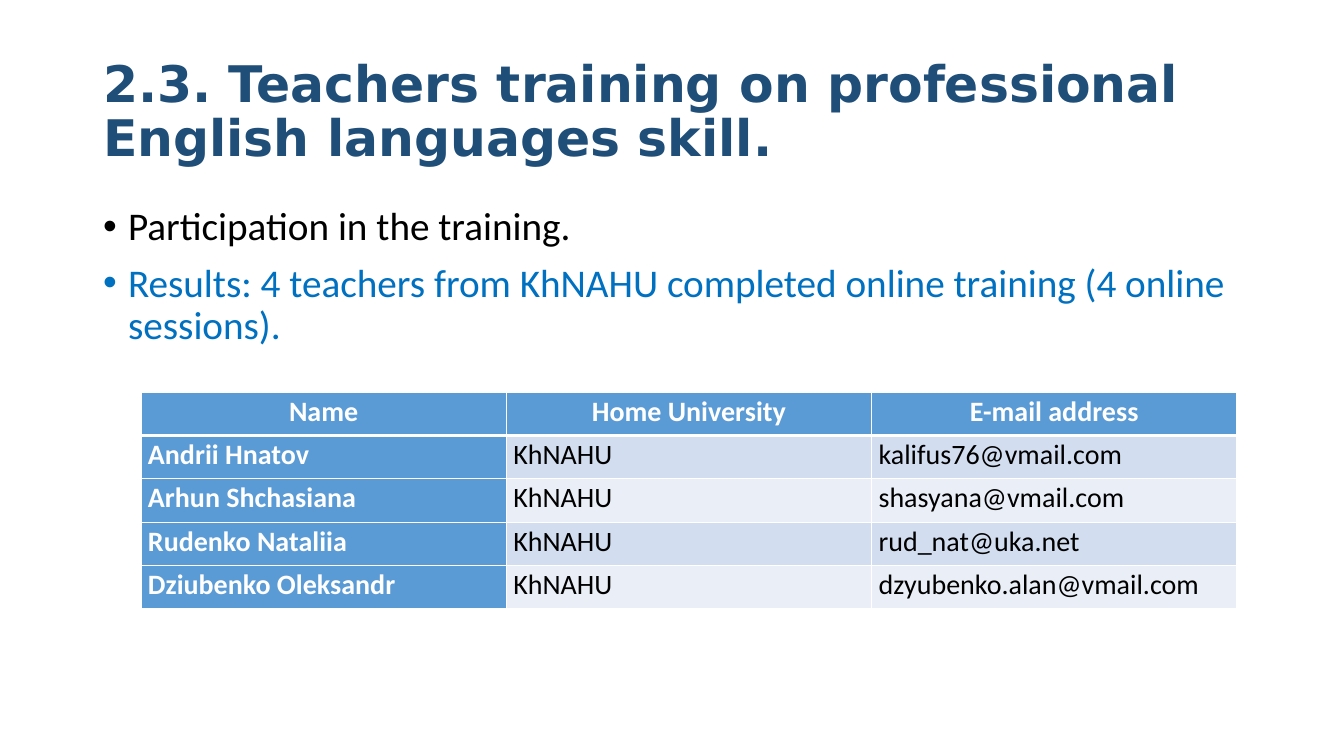
from lxml import etree
from pptx import Presentation
from pptx.dml.color import RGBColor
from pptx.enum.text import MSO_ANCHOR, MSO_AUTO_SIZE, PP_ALIGN
from pptx.oxml.ns import qn
from pptx.util import Pt

LEFT, CENTER = PP_ALIGN.LEFT, PP_ALIGN.CENTER
TOP, MIDDLE = MSO_ANCHOR.TOP, MSO_ANCHOR.MIDDLE
NO_AUTO_SIZE = MSO_AUTO_SIZE.NONE

WHITE, BLACK = "FFFFFF", "000000"
NAVY, BLUE, HEADER_BLUE = "1F4E79", "0070C0", "5B9BD5"
BANDS = ("D2DEEF", "EAEFF7")

TITLE = "2.3. Teachers training on professional English languages skill."
BULLETS = [
    ("Participation in the training.", BLACK),
    ("Results: 4 teachers from KhNAHU completed online training (4 online sessions).", BLUE),
]
TEACHERS = [
    ("Name", "Home University", "E-mail address"),
    ("Andrii Hnatov", "KhNAHU", "kalifus76@vmail.com"),
    ("Arhun Shchasiana", "KhNAHU", "shasyana@vmail.com"),
    ("Rudenko Nataliia", "KhNAHU", "rud_nat@uka.net"),
    ("Dziubenko Oleksandr", "KhNAHU", "dzyubenko.alan@vmail.com"),
]


def px(length):
    return round(length * 914400 / 100.8)


def color(value):
    return RGBColor.from_string(value)


class SlideBuilder:
    title_font = "DejaVu Sans"
    body_font = "Calibri"

    def __init__(self, presentation):
        self.slide = presentation.slides.add_slide(presentation.slide_layouts[1])

    def place(self, shape, box, anchor):
        shape.left, shape.top, shape.width, shape.height = map(px, box)
        frame = shape.text_frame
        frame.auto_size = NO_AUTO_SIZE
        frame.word_wrap = True
        frame.vertical_anchor = anchor
        return frame

    def set_text(self, paragraph, text, size, fill, name, bold=False, align=LEFT, spacing=0.9):
        paragraph.text = text
        paragraph.alignment = align
        paragraph.line_spacing = spacing
        font = paragraph.font
        font.name, font.size, font.bold = name, Pt(size), bold
        font.color.rgb = color(fill)

    def title(self, text, box):
        frame = self.place(self.slide.shapes.title, box, MIDDLE)
        self.set_text(frame.paragraphs[0], text, 36, NAVY, self.title_font, bold=True)

    def bullets(self, items, box):
        frame = self.place(self.slide.placeholders[1], box, TOP)
        for index, (text, fill) in enumerate(items):
            paragraph = frame.add_paragraph() if index else frame.paragraphs[0]
            self.set_text(paragraph, text, 28, fill, self.body_font)
            paragraph.space_before = Pt(10)
            properties = paragraph._p.get_or_add_pPr()
            properties.set("marL", str(px(25)))
            properties.set("indent", str(px(-25)))

    def borders(self, cell, bottom):
        properties = cell._tc.get_or_add_tcPr()
        widths = {"a:lnL": 1, "a:lnR": 1, "a:lnT": 1, "a:lnB": bottom}
        for position, (tag, width) in enumerate(widths.items()):
            line = etree.Element(qn(tag), w=str(Pt(width)))
            fill = etree.SubElement(line, qn("a:solidFill"))
            etree.SubElement(fill, qn("a:srgbClr"), val=WHITE)
            properties.insert(position, line)

    def table(self, rows, box):
        frame = self.slide.shapes.add_table(len(rows), len(rows[0]), *map(px, box))
        for row, values in enumerate(rows):
            for column, text in enumerate(values):
                cell = frame.table.cell(row, column)
                heading = row == 0 or column == 0
                cell.margin_left = cell.margin_right = px(7)
                cell.margin_top = cell.margin_bottom = 0
                cell.fill.solid()
                cell.fill.fore_color.rgb = color(HEADER_BLUE if heading else BANDS[(row - 1) % 2])
                self.borders(cell, 1 if row else 3)
                self.set_text(cell.text_frame.paragraphs[0], text, 20,
                              WHITE if heading else BLACK, self.body_font, bold=heading,
                              align=LEFT if row else CENTER, spacing=1.07)


def main():
    presentation = Presentation()
    presentation.slide_width, presentation.slide_height = px(1344), px(756)
    builder = SlideBuilder(presentation)
    builder.title(TITLE, (93, 40, 1159, 146))
    builder.bullets(BULLETS, (93, 202, 1159, 480))
    builder.table(TEACHERS, (141, 392, 1096, 217))
    presentation.save("out.pptx")


if __name__ == "__main__":
    main()
